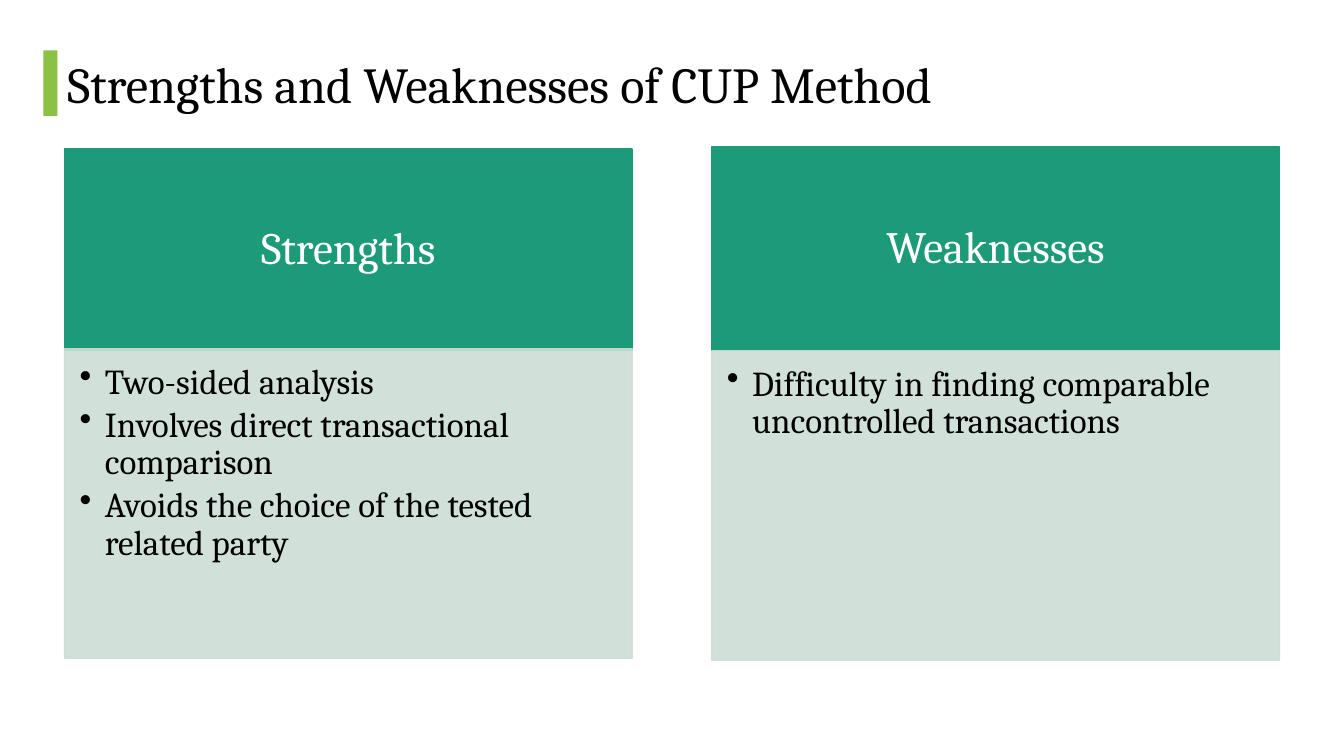
from dataclasses import dataclass

from lxml import etree
from pptx import Presentation
from pptx.dml.color import RGBColor
from pptx.enum.shapes import MSO_SHAPE
from pptx.enum.text import MSO_ANCHOR, PP_ALIGN
from pptx.oxml.ns import qn
from pptx.util import Inches, Pt

RECT = MSO_SHAPE.RECTANGLE
TOP, MIDDLE = MSO_ANCHOR.TOP, MSO_ANCHOR.MIDDLE
LEFT, CENTER = PP_ALIGN.LEFT, PP_ALIGN.CENTER
SLIDE_W, SLIDE_H = 13.33, 7.5
FONT = "Cambria"
BLACK, WHITE = "000000", "FFFFFF"
LIME, GREEN, MIST = "8BC145", "1D9A78", "CDDED6"


@dataclass
class Box:
    """Left, top, width and height in percent of the slide."""
    x: float
    y: float
    w: float
    h: float

    def emu(self) -> tuple:
        return (Inches(self.x * SLIDE_W / 100), Inches(self.y * SLIDE_H / 100),
                Inches(self.w * SLIDE_W / 100), Inches(self.h * SLIDE_H / 100))


@dataclass
class TextStyle:
    size: float
    color: str
    align: PP_ALIGN
    anchor: MSO_ANCHOR
    insets: tuple
    after: float = 0
    bullet: bool = False


@dataclass
class Panel:
    heading: str
    points: list
    head: Box
    body: Box


TITLE = TextStyle(36, BLACK, LEFT, MIDDLE, (0.1, 0.05, 0.1, 0.05))
HEADING = TextStyle(32, WHITE, CENTER, MIDDLE, (0.25, 0.14, 0.25, 0.14), 11.2)
POINTS = TextStyle(25, BLACK, LEFT, TOP, (0.15, 0.15, 0.19, 0.22), 3.75, True)

PANEL_W, BODY_H = 42.24, 40.93
LEFT_X, RIGHT_X = 4.8, 52.96
PANELS = [
    Panel("Strengths",
          ["Two-sided analysis",
           "Involves direct transactional comparison",
           "Avoids the choice of the tested related party"],
          Box(LEFT_X, 19.73, PANEL_W, 26.67), Box(LEFT_X, 46.13, PANEL_W, BODY_H)),
    Panel("Weaknesses",
          ["Difficulty in finding comparable uncontrolled transactions"],
          Box(RIGHT_X, 19.47, PANEL_W, 26.93), Box(RIGHT_X, 46.4, PANEL_W, BODY_H)),
]


def rgb(color: str) -> RGBColor:
    return RGBColor.from_string(color)


def add_bullet(p) -> None:
    pPr = p._p.get_or_add_pPr()
    pPr.set("marL", str(Inches(0.25)))
    pPr.set("indent", str(Inches(-0.25)))
    etree.SubElement(pPr, qn("a:buChar")).set("char", "•")


def write(s, lines: list, style: TextStyle) -> None:
    tf = s.text_frame
    tf.word_wrap = True
    tf.vertical_anchor = style.anchor
    tf.margin_left, tf.margin_top, tf.margin_right, tf.margin_bottom = map(Inches, style.insets)
    tf.text = "\n".join(lines)
    for p in tf.paragraphs:
        p.alignment = style.align
        p.line_spacing = 0.9
        p.space_after = Pt(style.after)
        if style.bullet:
            add_bullet(p)
        for r in p.runs:
            r.font.name = FONT
            r.font.size = Pt(style.size)
            r.font.color.rgb = rgb(style.color)


def add_rect(slide, box: Box, color: str, outlined: bool = True, opacity: int = 100):
    s = slide.shapes.add_shape(RECT, *box.emu())
    s.shadow.inherit = False
    s.fill.solid()
    s.fill.fore_color.rgb = rgb(color)
    if outlined:
        s.line.color.rgb = rgb(color)
        s.line.width = Pt(1)
    else:
        s.line.fill.background()
    if opacity < 100:
        for clr in s._element.spPr.iter(qn("a:srgbClr")):
            etree.SubElement(clr, qn("a:alpha")).set("val", str(opacity * 1000))
    return s


def add_panel(slide, panel: Panel) -> None:
    write(add_rect(slide, panel.head, GREEN), [panel.heading], HEADING)
    write(add_rect(slide, panel.body, MIST, opacity=90), panel.points, POINTS)


def main() -> None:
    prs = Presentation()
    prs.slide_width, prs.slide_height = Inches(SLIDE_W), Inches(SLIDE_H)
    slide = prs.slides.add_slide(prs.slide_layouts[6])
    title = slide.shapes.add_textbox(*Box(4.28, 3.2, 89.5, 16.53).emu())
    write(title, ["Strengths and Weaknesses of CUP Method"], TITLE)
    add_rect(slide, Box(3.23, 6.67, 1.05, 8.67), LIME, outlined=False)
    for panel in PANELS:
        add_panel(slide, panel)
    prs.save("out.pptx")


if __name__ == "__main__":
    main()
